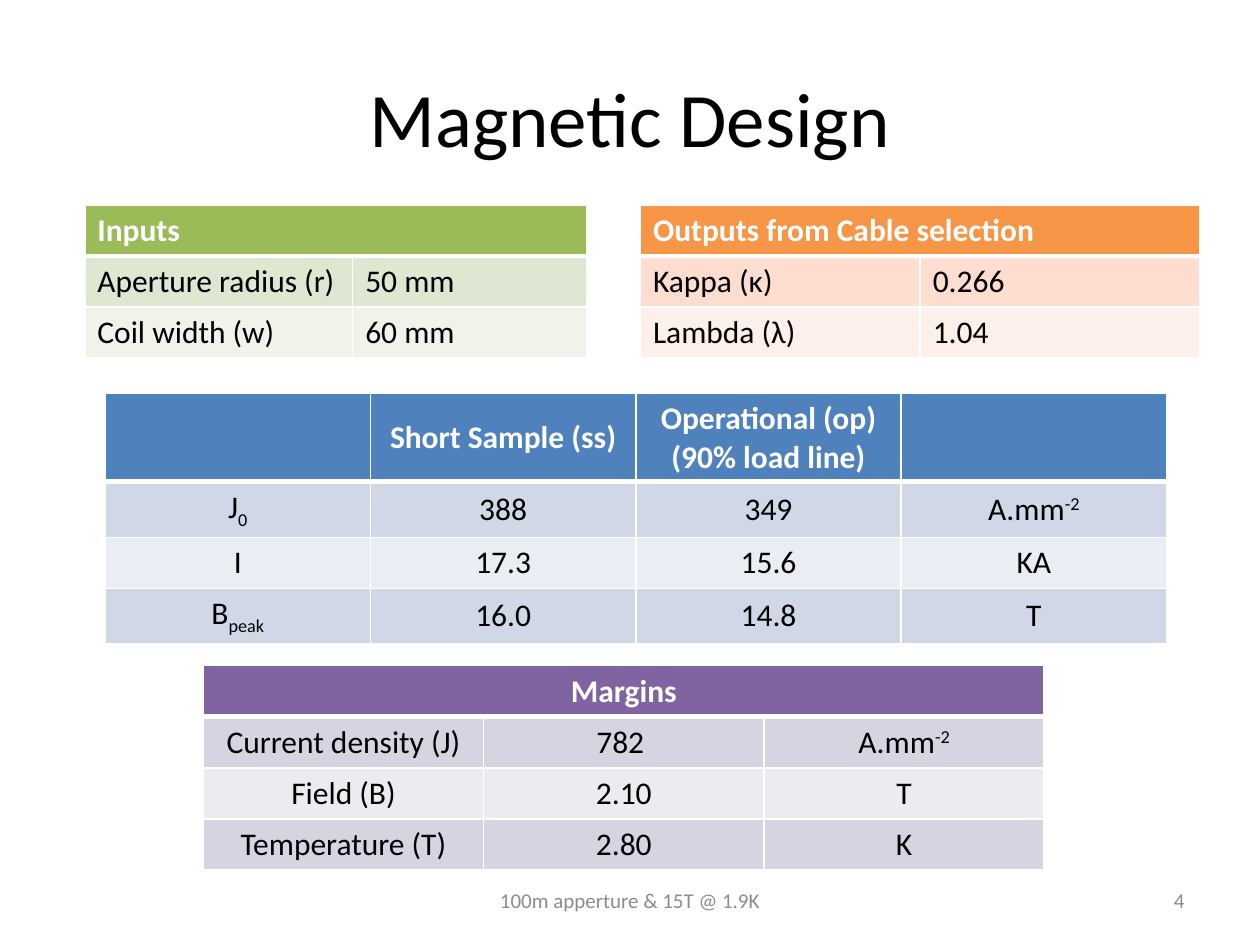
"""Build the Magnetic Design slide with its input, result and margin tables."""
from dataclasses import dataclass
from typing import NamedTuple

from lxml import etree
from pptx import Presentation
from pptx import util as u
from pptx.dml.color import RGBColor
from pptx.enum import text
from pptx.oxml import ns

FONT = "Calibri"
WHITE, BLACK, GREY = "FFFFFF", "000000", "8C8C8C"
ROW_HEIGHT = 1.03


class Run(NamedTuple):
    text: str
    baseline: int = 0


@dataclass
class TableSpec:
    left: float
    top: float
    columns: list[float]
    rows: list[list]
    header_fill: str
    bands: tuple[str, str]
    header_height: float = ROW_HEIGHT
    centred: bool = True


CURRENT_DENSITY_UNIT = [Run("A.mm"), Run("-2", 30)]
TABLES = [
    TableSpec(2.12, 7.93, [5.35] * 4, [
        ["", "Short Sample (ss)", "Operational (op) (90% load line)", ""],
        [[Run("J"), Run("0", -25)], "388", "349", CURRENT_DENSITY_UNIT],
        ["I", "17.3", "15.6", "KA"],
        [[Run("B"), Run("peak", -25)], "16.0", "14.8", "T"],
    ], "4F81BD", ("D0D8E8", "E9EDF4"), header_height=1.78),
    TableSpec(12.91, 4.13, [5.64] * 2, [
        ["Outputs from Cable selection"],
        ["Kappa (κ)", "0.266"],
        ["Lambda (λ)", "1.04"],
    ], "F79646", ("FCDDCF", "FDEFE9"), centred=False),
    TableSpec(1.71, 4.13, [5.4, 4.71], [
        ["Inputs"],
        ["Aperture radius (r)", "50 mm"],
        ["Coil width (w)", "60 mm"],
    ], "9BBB59", ("DEE7D1", "EFF3EA"), centred=False),
    TableSpec(4.1, 13.42, [5.65] * 3, [
        ["Margins"],
        ["Current density (J)", "782 ", CURRENT_DENSITY_UNIT],
        ["Field (B)", "2.10", "T"],
        ["Temperature (T)", "2.80", "K"],
    ], "8064A2", ("D8D3E0", "EDEAF0")),
]


def colour(value: str) -> RGBColor:
    return RGBColor.from_string(value)


def add_runs(paragraph, runs: list[Run], size: float, fill: str, bold: bool = False) -> None:
    for part in runs:
        run = paragraph.add_run()
        run.text = part.text
        run.font.name, run.font.size, run.font.bold = FONT, u.Pt(size), bold
        run.font.color.rgb = colour(fill)
        if part.baseline:
            run.font._element.set("baseline", str(part.baseline * 1000))


def set_borders(cell, top: float, bottom: float) -> None:
    properties = cell._tc.get_or_add_tcPr()
    for side, width in (("L", 1), ("R", 1), ("T", top), ("B", bottom)):
        line = etree.SubElement(properties, ns.qn(f"a:ln{side}"), w=str(u.Pt(width)))
        fill = etree.SubElement(line, ns.qn("a:solidFill"))
        etree.SubElement(fill, ns.qn("a:srgbClr"), val=WHITE)


def add_table(slide, spec: TableSpec) -> None:
    heights = [spec.header_height] + [ROW_HEIGHT] * (len(spec.rows) - 1)
    table = slide.shapes.add_table(
        len(heights), len(spec.columns), u.Cm(spec.left), u.Cm(spec.top),
        u.Cm(sum(spec.columns)), u.Cm(sum(heights))).table
    for column, width in zip(table.columns, spec.columns):
        column.width = u.Cm(width)
    for index, (row, height, values) in enumerate(zip(table.rows, heights, spec.rows)):
        row.height = u.Cm(height)
        is_header = index == 0
        for cell in row.cells:
            set_borders(cell, 3 if index == 1 else 1, 3 if is_header else 1)
            cell.fill.solid()
            cell.fill.fore_color.rgb = colour(
                spec.header_fill if is_header else spec.bands[(index - 1) % 2])
        if len(values) < len(spec.columns):
            table.cell(index, 0).merge(table.cell(index, len(spec.columns) - 1))
        for cell, value in zip(row.cells, values):
            paragraph = cell.text_frame.paragraphs[0]
            if spec.centred:
                cell.vertical_anchor = text.MSO_ANCHOR.MIDDLE
                paragraph.alignment = text.PP_ALIGN.CENTER
            if value:
                runs = [Run(value)] if isinstance(value, str) else value
                add_runs(paragraph, runs, 18, WHITE if is_header else BLACK, is_header)


def fill_text(shape, words: str, size: float, fill: str, alignment) -> None:
    frame = shape.text_frame
    frame.word_wrap = True
    frame.vertical_anchor = text.MSO_ANCHOR.MIDDLE
    frame.paragraphs[0].alignment = alignment
    add_runs(frame.paragraphs[0], [Run(words)], size, fill)


def add_footer(slide, left: float, width: float, words: str, alignment) -> None:
    shape = slide.shapes.add_textbox(u.Cm(left), u.Cm(17.65), u.Cm(width), u.Cm(1.01))
    fill_text(shape, words, 12, GREY, alignment)


def main() -> None:
    presentation = Presentation()
    presentation.slide_width, presentation.slide_height = u.Cm(25.4), u.Cm(19.05)
    slide = presentation.slides.add_slide(presentation.slide_layouts[5])
    title = slide.shapes.title
    title.left, title.top = u.Cm(1.27), u.Cm(0.76)
    title.width, title.height = u.Cm(22.86), u.Cm(3.18)
    fill_text(title, "Magnetic Design", 44, BLACK, text.PP_ALIGN.CENTER)
    add_footer(slide, 8.68, 8.04, "100m apperture & 15T @ 1.9K", text.PP_ALIGN.CENTER)
    add_footer(slide, 18.2, 5.93, "4", text.PP_ALIGN.RIGHT)
    for spec in TABLES:
        add_table(slide, spec)
    presentation.save("out.pptx")


if __name__ == "__main__":
    main()
